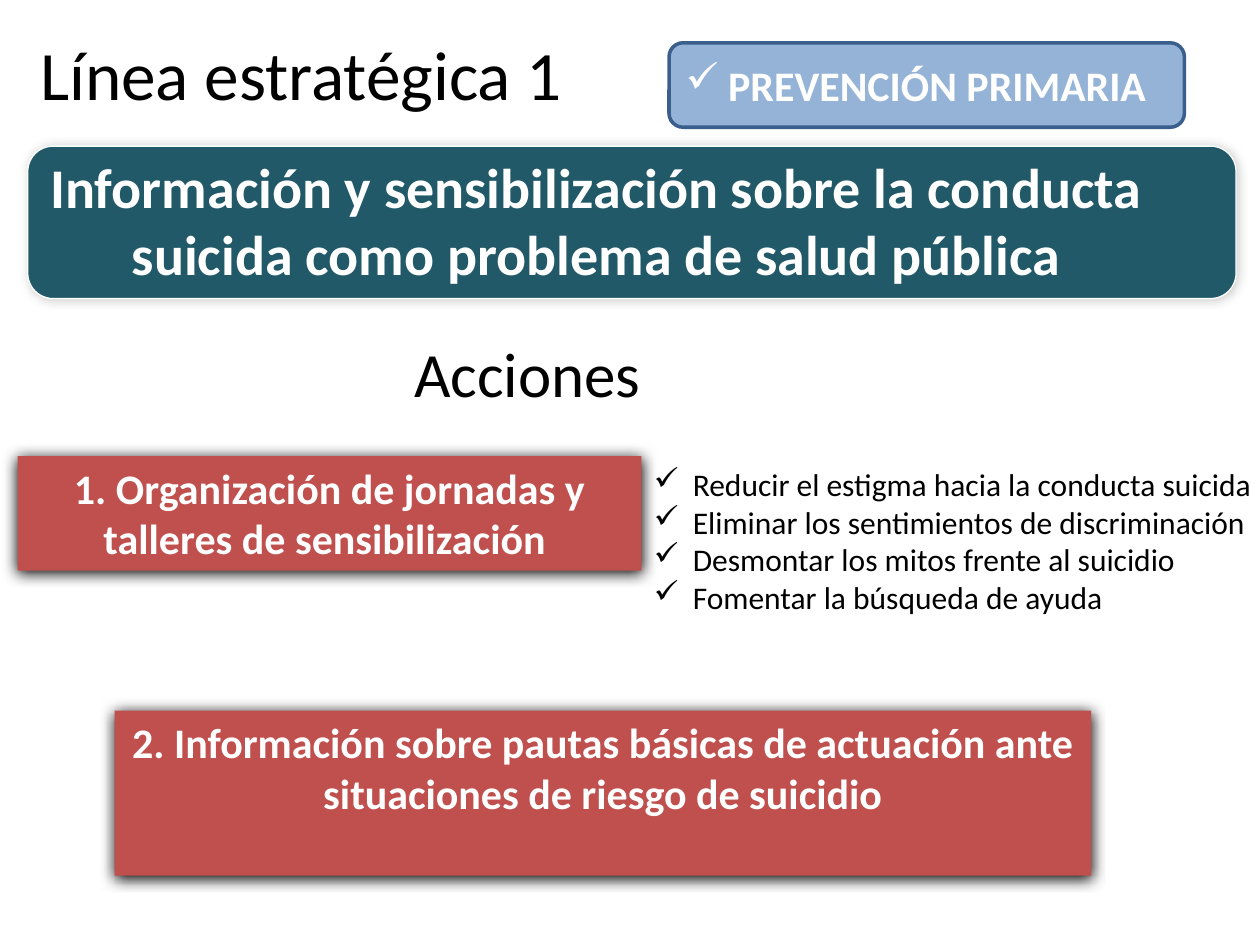
from dataclasses import dataclass
from typing import Optional

from lxml import etree
from pptx import Presentation
from pptx.dml.color import RGBColor
from pptx.enum import shapes, text
from pptx.oxml import ns
from pptx.util import Inches, Pt

WHITE = RGBColor(0xFF, 0xFF, 0xFF)
BLACK = RGBColor(0, 0, 0)
TEAL = RGBColor(0x21, 0x59, 0x68)
RED = RGBColor(0xC0, 0x50, 0x4D)
LIGHT_BLUE = RGBColor(0x95, 0xB3, 0xD7)
DARK_BLUE = RGBColor(0x3A, 0x5F, 0x8C)

RECT = shapes.MSO_SHAPE.RECTANGLE
ROUNDED = shapes.MSO_SHAPE.ROUNDED_RECTANGLE
LEFT, CENTER = text.PP_ALIGN.LEFT, text.PP_ALIGN.CENTER
TOP, MIDDLE = text.MSO_ANCHOR.TOP, text.MSO_ANCHOR.MIDDLE


@dataclass(frozen=True)
class Shadow:
    alpha: int  # percent
    blur: float  # points
    distance: float  # points
    angle: int  # degrees


@dataclass(frozen=True)
class Label:
    lines: tuple[str, ...]
    size: float
    color: RGBColor = BLACK
    bold: bool = False
    align: text.PP_ALIGN = LEFT
    anchor: text.MSO_ANCHOR = TOP
    wrap: bool = True
    bullet: str = ""
    indent: float = 0


@dataclass(frozen=True)
class Box:
    left: float
    top: float
    width: float
    height: float
    label: Optional[Label] = None
    shape: Optional[shapes.MSO_SHAPE] = None  # None makes a text box
    fill: RGBColor = WHITE
    line: Optional[RGBColor] = None
    line_width: float = 0
    shadow: Optional[Shadow] = None


def add_shadow(s, shadow: Shadow) -> None:
    effects = s._element.spPr.find(ns.qn("a:effectLst"))
    outer = etree.SubElement(
        effects, ns.qn("a:outerShdw"), blurRad=str(Pt(shadow.blur)),
        dist=str(Pt(shadow.distance)), dir=str(shadow.angle * 60000),
        algn="ctr", rotWithShape="0")
    color = etree.SubElement(outer, ns.qn("a:srgbClr"), val="000000")
    etree.SubElement(color, ns.qn("a:alpha"), val=str(shadow.alpha * 1000))


def add_bullet(p, char: str, indent: float) -> None:
    pPr = p._p.get_or_add_pPr()
    pPr.set("marL", str(Inches(indent)))
    pPr.set("indent", str(-Inches(indent)))
    etree.SubElement(pPr, ns.qn("a:buChar"), char=char)


def write_label(tf, label: Label) -> None:
    tf.word_wrap = label.wrap
    tf.vertical_anchor = label.anchor
    tf.text = "\n".join(label.lines)
    for p in tf.paragraphs:
        p.alignment = label.align
        if label.bullet:
            add_bullet(p, label.bullet, label.indent)
        for r in p.runs:
            r.font.name = "Calibri"
            r.font.size = Pt(label.size)
            r.font.bold = label.bold
            r.font.color.rgb = label.color


def draw_box(slide, box: Box) -> None:
    frame = [Inches(v) for v in (box.left, box.top, box.width, box.height)]
    if box.shape is None:
        s = slide.shapes.add_textbox(*frame)
    else:
        s = slide.shapes.add_shape(box.shape, *frame)
        s.shadow.inherit = False
        s.fill.solid()
        s.fill.fore_color.rgb = box.fill
        if box.line is None:
            s.line.fill.background()
        else:
            s.line.color.rgb = box.line
            s.line.width = Pt(box.line_width)
        if box.shadow:
            add_shadow(s, box.shadow)
    if box.label:
        write_label(s.text_frame, box.label)


def heading(words: str, size: float) -> Label:
    return Label((words,), size, anchor=MIDDLE)


def centered(words: str, size: float) -> Label:
    return Label((words,), size, WHITE, bold=True, align=CENTER)


def action(left: float, top: float, width: float, height: float, words: str) -> Box:
    return Box(left, top, width, height, centered(words, 24), RECT, RED,
               shadow=Shadow(100, 8.5, 1, 90))


GOALS = Label((
    "Reducir el estigma hacia la conducta suicida",
    "Eliminar los sentimientos de discriminación",
    "Desmontar los mitos frente al suicidio",
    "Fomentar la búsqueda de ayuda",
), 18, wrap=False, bullet="✓", indent=0.31)

PREVENTION = Label((" PREVENCIÓN PRIMARIA",), 24, WHITE, bold=True,
                   anchor=MIDDLE, wrap=False, bullet="✓")

BOXES = (
    # Title and strategic line banner
    Box(0.22, 0.16, 4.78, 0.83, heading("Línea estratégica 1", 39.6)),
    Box(0.22, 1.16, 9.59, 1.21, None, ROUNDED, TEAL, WHITE, 0.75,
        Shadow(20, 6, 0, 225)),
    Box(-0.1, 1.16, 9.67, 1.18, centered(
        "Información y sensibilización sobre la conducta suicida "
        "como problema de salud pública", 32)),
    # Actions and goals
    action(0.14, 3.62, 4.95, 0.91,
           "1. Organización de jornadas y talleres de sensibilización "),
    action(0.91, 5.64, 7.75, 1.31,
           "2. Información sobre pautas básicas de actuación ante "
           "situaciones de riesgo de suicidio"),
    Box(5.09, 3.64, 5.01, 1.31, GOALS),
    Box(3.19, 2.54, 2.68, 0.83, heading("Acciones", 36)),
    # Prevention level
    Box(5.31, 0.34, 4.09, 0.67, PREVENTION, ROUNDED, LIGHT_BLUE, DARK_BLUE, 2),
)


def main() -> None:
    prs = Presentation()
    prs.slide_width, prs.slide_height = Inches(10), Inches(7.5)
    slide = prs.slides.add_slide(prs.slide_layouts[6])
    for box in BOXES:
        draw_box(slide, box)
    prs.save("out.pptx")


if __name__ == "__main__":
    main()
